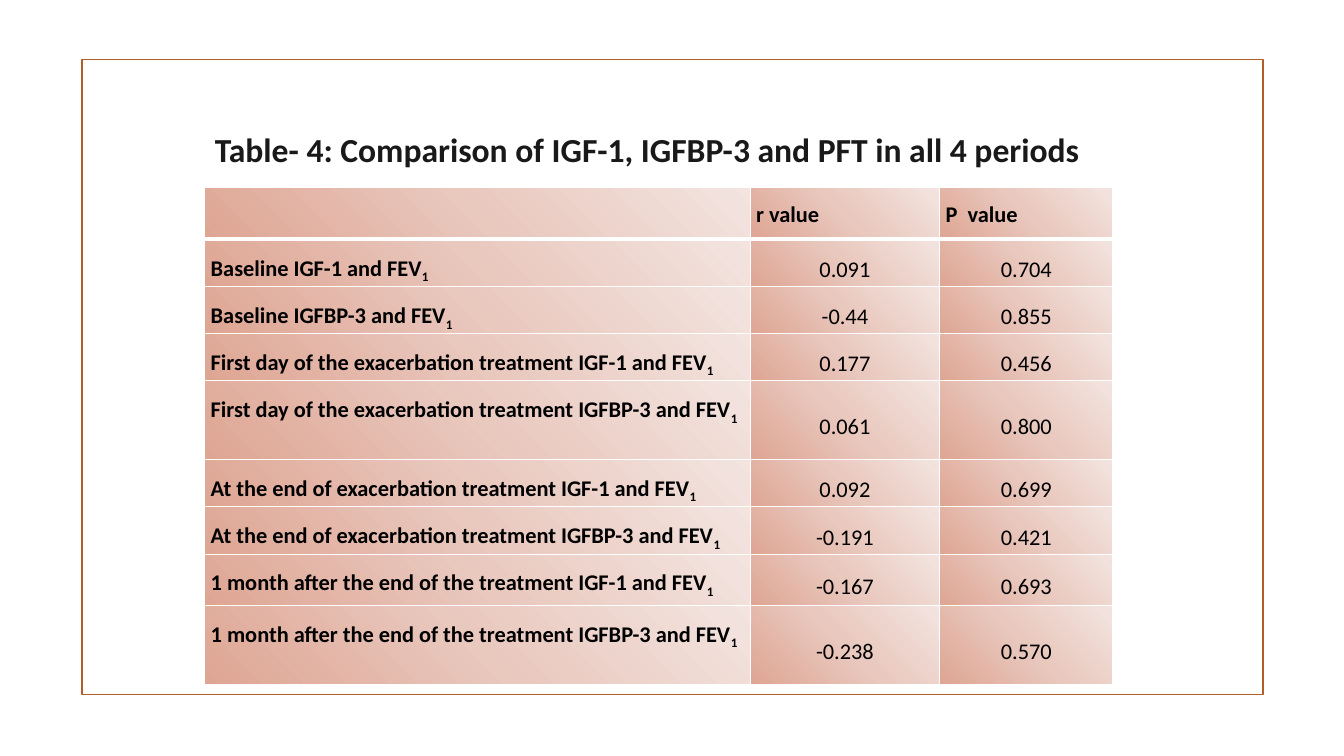
from lxml.etree import SubElement
from pptx import Presentation
from pptx.dml.color import RGBColor
from pptx.enum.shapes import MSO_SHAPE as Shape
from pptx.enum.text import MSO_ANCHOR as Anchor, MSO_AUTO_SIZE as AutoSize, PP_ALIGN as Align
from pptx.oxml.ns import qn
from pptx.util import Inches, Pt

COLOURS = {"frame": "B15E28", "title": "191919", "text": "000000", "border": "FFFFFF",
           "deep": "DEA593", "middle": "E9C8BE", "pale": "F3E4E0"}
FONT = "Calibri"
WIDTH, HEIGHT = Inches(13.33), Inches(7.5)
COLUMNS = (5.41, 1.88, 1.72)
SHORT, MEDIUM, TALL = 0.47, 0.51, 0.78
HEADER = ("", "r value", "P  value")
RESULTS = (
    ("Baseline IGF-1 and FEV", "0.091", "0.704", SHORT),
    ("Baseline IGFBP-3 and FEV", "-0.44", "0.855", SHORT),
    ("First day of the exacerbation treatment IGF-1 and FEV", "0.177", "0.456", SHORT),
    ("First day of the exacerbation treatment IGFBP-3 and FEV", "0.061", "0.800", TALL),
    ("At the end of exacerbation treatment IGF-1 and FEV", "0.092", "0.699", SHORT),
    ("At the end of exacerbation treatment IGFBP-3 and FEV", "-0.191", "0.421", SHORT),
    ("1 month after the end of the treatment IGF-1 and FEV", "-0.167", "0.693", MEDIUM),
    ("1 month after the end of the treatment IGFBP-3 and FEV", "-0.238", "0.570", TALL),
)


def share(left, top, width, height):
    """Turn percentages of the slide into lengths."""
    return [round(part * whole / 100)
            for part, whole in zip((left, top, width, height), (WIDTH, HEIGHT) * 2)]


def style_spans(para, size, colour, bold):
    """Format every run of a paragraph."""
    for span in para.runs:
        span.font.name, span.font.size, span.font.bold = FONT, Pt(size), bold
        span.font.color.rgb = RGBColor.from_string(COLOURS[colour])


def add_frame(page):
    """Draw the thin outline around the content."""
    frame = page.shapes.add_shape(Shape.RECTANGLE, *share(6.08, 7.87, 87.92, 84))
    frame.shadow.inherit = False
    frame.fill.background()
    frame.line.color.rgb = RGBColor.from_string(COLOURS["frame"])
    frame.line.width = Pt(1.25)


def add_title(page, text):
    """Fill and place the title placeholder."""
    title = page.shapes.title
    title.left, title.top, title.width, title.height = share(15.23, 8.4, 67.22, 14.8)
    box = title.text_frame
    box.text = text
    box.word_wrap, box.auto_size = True, AutoSize.SHAPE_TO_FIT_TEXT
    box.vertical_anchor = Anchor.TOP
    para = box.paragraphs[0]
    para.alignment, para.line_spacing = Align.LEFT, 2.5
    style_spans(para, 24, "title", True)


def add_colour(parent, name):
    """Append a colour element."""
    SubElement(parent, qn("a:srgbClr"), val=COLOURS[name])


def paint_cell(cell, bottom):
    """Give a cell white borders and a gradient from its lower left corner."""
    props = cell._tc.get_or_add_tcPr()
    for side, width in zip("LRTB", (1, 1, 1, bottom)):
        line = SubElement(props, qn(f"a:ln{side}"), w=str(Pt(width)))
        add_colour(SubElement(line, qn("a:solidFill")), "border")
    gradient = SubElement(props, qn("a:gradFill"), rotWithShape="1")
    stops = SubElement(gradient, qn("a:gsLst"))
    for position, name in zip((0, 50000, 100000), ("deep", "middle", "pale")):
        add_colour(SubElement(stops, qn("a:gs"), pos=str(position)), name)
    route = SubElement(gradient, qn("a:path"))
    route.set("path", "circle")
    SubElement(route, qn("a:fillToRect"), l="0", t="100000", r="100000", b="0")


def fill_cell(cell, text, bold=True, align=Align.LEFT, anchor=Anchor.TOP, subscript="", bottom=1):
    """Write, format and paint one cell."""
    cell.margin_left = cell.margin_right = Inches(0.06)
    cell.margin_top = cell.margin_bottom = 0
    cell.vertical_anchor = anchor
    para = cell.text_frame.paragraphs[0]
    para.text = text
    para.alignment, para.line_spacing = align, 1.5
    if subscript:
        span = para.add_run()
        span.text = subscript
        span._r.get_or_add_rPr().set("baseline", "-25000")
    style_spans(para, 16, "text", bold)
    paint_cell(cell, bottom)


def add_results(page):
    """Build the table of correlations."""
    table = page.shapes.add_table(len(RESULTS) + 1, len(COLUMNS),
                                  *share(15.23, 24.8, 67.52, 65.73)).table
    table.horz_banding = False
    for column, width in zip(table.columns, COLUMNS):
        column.width = Inches(width)
    table.rows[0].height = Inches(MEDIUM)
    for index, text in enumerate(HEADER):
        fill_cell(table.cell(0, index), text, bottom=3)
    for row, (label, *values, height) in enumerate(RESULTS, 1):
        table.rows[row].height = Inches(height)
        anchor = Anchor.MIDDLE if label.startswith("Baseline") else Anchor.TOP
        fill_cell(table.cell(row, 0), label, anchor=anchor, subscript="1")
        for index, value in enumerate(values, 1):
            fill_cell(table.cell(row, index), value, False, Align.CENTER, Anchor.MIDDLE)


def main():
    """Build and save the slide."""
    deck = Presentation()
    deck.slide_width, deck.slide_height = WIDTH, HEIGHT
    page = deck.slides.add_slide(deck.slide_layouts[5])
    add_frame(page)
    add_results(page)
    add_title(page, "Table- 4: Comparison of IGF-1, IGFBP-3 and PFT in all 4 periods")
    deck.save("out.pptx")


if __name__ == "__main__":
    main()
